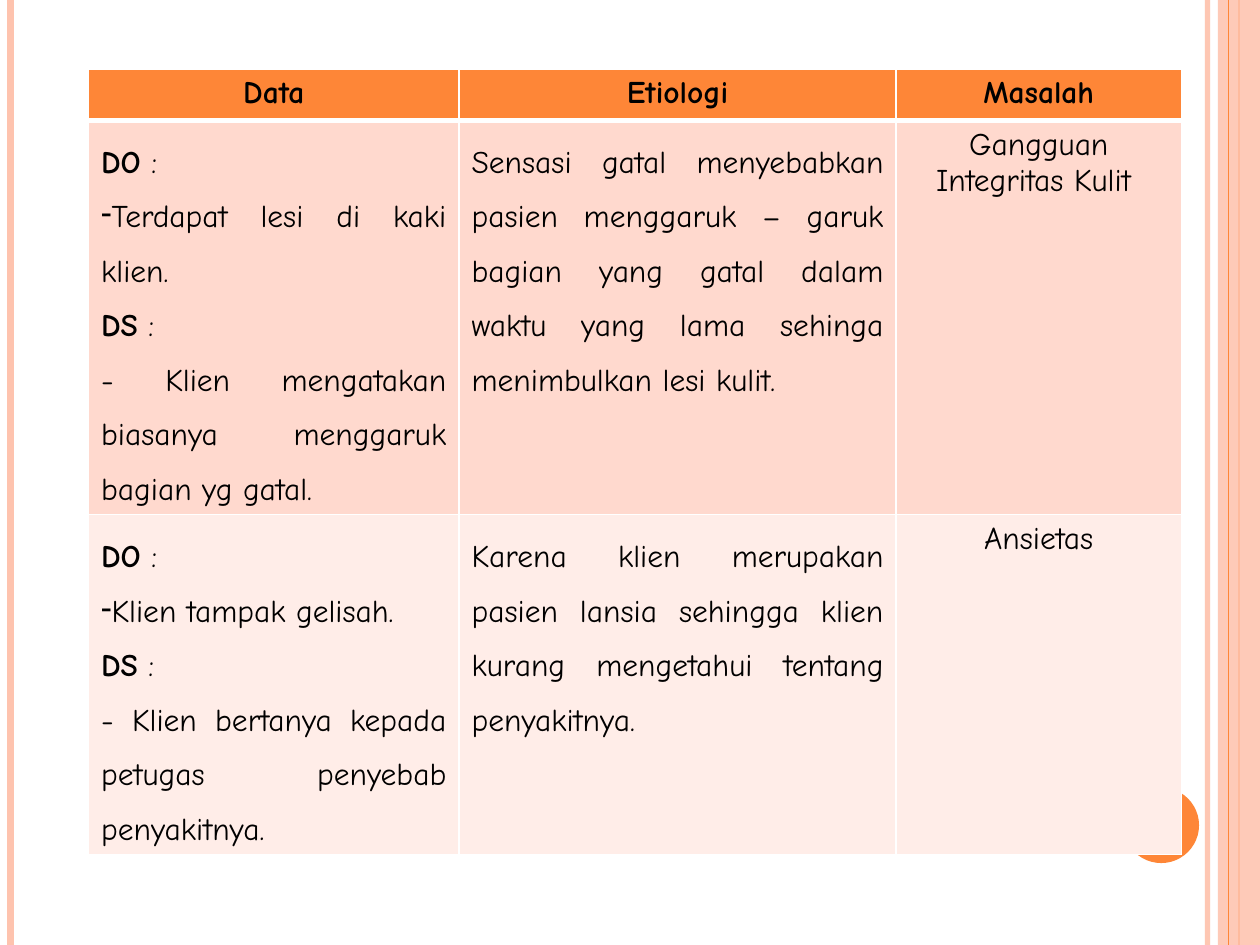
from dataclasses import dataclass

from lxml.etree import SubElement
from pptx import Presentation
from pptx.dml.color import RGBColor
from pptx.enum.shapes import MSO_CONNECTOR, MSO_SHAPE
from pptx.enum.text import PP_ALIGN
from pptx.oxml import parse_xml
from pptx.oxml.ns import nsdecls, qn
from pptx.util import Pt


@dataclass(frozen=True)
class Theme:
    """Colours, font and sizes of the slide."""
    orange: str = "FE8637"
    peach: str = "FEC3AE"
    white: str = "FFFFFF"
    text: str = "000000"
    bands: tuple = ("FFD9CE", "FFEDE8")
    font: str = "Comic Neue"
    size: float = 18
    border: float = 1
    header_border: float = 3


THEME = Theme()
HEADINGS = ("Data", "Etiologi", "Masalah")
FINDINGS = (
    (
        ("Terdapat lesi di kaki klien.",
         "- Klien mengatakan biasanya menggaruk bagian yg gatal."),
        "Sensasi gatal menyebabkan pasien menggaruk – garuk bagian yang gatal "
        "dalam waktu yang lama sehinga menimbulkan lesi kulit.",
        "Gangguan Integritas Kulit ",
    ),
    (
        ("Klien tampak gelisah.",
         "- Klien bertanya kepada petugas penyebab penyakitnya."),
        "Karena klien merupakan pasien lansia sehingga klien kurang mengetahui "
        "tentang penyakitnya. ",
        "Ansietas",
    ),
)


def apply_format(target, values):
    """Set every attribute in values on the target."""
    for name, value in values.items():
        setattr(target, name, value)


def set_alpha(fill, percent):
    """Make a solid fill partly transparent."""
    color = fill._xPr.find(qn("a:solidFill"))[0]
    SubElement(color, qn("a:alpha"), val=str(percent * 1000))


def add_stripe(slide, x, top, height, width, color, opacity=100):
    """Draw a vertical line."""
    line = slide.shapes.add_connector(
        MSO_CONNECTOR.STRAIGHT, Pt(x), Pt(top), Pt(x), Pt(top + height))
    line.line.width = Pt(width)
    line.line.color.rgb = RGBColor.from_string(color)
    if opacity < 100:
        set_alpha(line.line.fill, opacity)
    SubElement(line._element.spPr, qn("a:effectLst"))


def add_plain_shape(slide, kind, box, color, opacity=100):
    """Draw a filled shape without outline or shadow."""
    shape = slide.shapes.add_shape(kind, *map(Pt, box))
    shape.shadow.inherit = False
    shape.fill.solid()
    shape.fill.fore_color.rgb = RGBColor.from_string(color)
    shape.line.fill.background()
    if opacity < 100:
        set_alpha(shape.fill, opacity)


def add_frame(slide, box):
    """Draw the stripes at both edges and the disc."""
    left, top, width, height = box
    right = left + width
    add_stripe(slide, right - 30, top, height, 3, THEME.peach, 93)
    add_stripe(slide, left + 6, top, height, 4.5, THEME.peach)
    add_stripe(slide, right - 12, top, height, 1.5, THEME.orange)
    add_plain_shape(slide, MSO_SHAPE.RECTANGLE,
                    (right - 24, top, 24, height), THEME.peach, 87)
    add_stripe(slide, right - 18, top, height, 0.75, THEME.orange)
    add_plain_shape(slide, MSO_SHAPE.OVAL,
                    (right - 78, top + height - 90, 43.2, 43.2), THEME.orange)


def style_cell(cell, color, top, bottom):
    """Fill a cell and give it white borders."""
    cell.fill.solid()
    cell.fill.fore_color.rgb = RGBColor.from_string(color)
    properties = cell._tc.get_or_add_tcPr()
    widths = {"lnL": THEME.border, "lnR": THEME.border, "lnT": top, "lnB": bottom}
    for position, (side, width) in enumerate(widths.items()):
        properties.insert(position, parse_xml(
            f'<a:{side} {nsdecls("a")} w="{int(Pt(width))}"><a:solidFill>'
            f'<a:srgbClr val="{THEME.white}"/></a:solidFill></a:{side}>'))


def write_paragraph(paragraph, runs, alignment, spacing=None, bullet=None):
    """Write (text, bold) runs into a paragraph."""
    apply_format(paragraph, {"alignment": alignment, "line_spacing": spacing})
    if bullet:
        properties = paragraph._p.get_or_add_pPr()
        apply_format_xml = {"marL": "0", "indent": "0"}
        properties.attrib.update(apply_format_xml)
        SubElement(properties, qn("a:buChar"), char=bullet)
    for text, bold in runs:
        run = paragraph.add_run()
        run.text = text
        apply_format(run.font, {"name": THEME.font, "size": Pt(THEME.size), "bold": bold})
        run.font.color.rgb = RGBColor.from_string(THEME.text)


def write_data(text_frame, objective, subjective):
    """Write the objective and subjective data of one finding."""
    lines = (
        ((("DO", True), (" :", False)), None),
        (((objective, False),), "-"),
        ((("DS", True), (" :", False)), None),
        (((subjective, False),), None),
    )
    for index, (runs, bullet) in enumerate(lines):
        paragraph = text_frame.add_paragraph() if index else text_frame.paragraphs[0]
        write_paragraph(paragraph, runs, PP_ALIGN.JUSTIFY, 1.5, bullet)


def add_findings_table(slide, box):
    """Add the table of data, etiology and problem."""
    left, top, width, height = box
    frame = slide.shapes.add_table(
        len(FINDINGS) + 1, len(HEADINGS), *map(Pt, box))
    table = frame.table
    apply_format(table, {"first_row": False, "horz_banding": False})
    for column, share in zip(table.columns, (0.339, 0.4, 0.261)):
        column.width = Pt(round(width * share, 1))
    for row in table.rows:
        row.height = Pt(29.2)
    frame.height = Pt(height)

    for column, heading in enumerate(HEADINGS):
        cell = table.cell(0, column)
        style_cell(cell, THEME.orange, THEME.border, THEME.header_border)
        write_paragraph(cell.text_frame.paragraphs[0], ((heading, True),), PP_ALIGN.CENTER)

    for row, (finding, color) in enumerate(zip(FINDINGS, THEME.bands), start=1):
        cells = [table.cell(row, column) for column in range(len(HEADINGS))]
        for cell in cells:
            style_cell(cell, color, THEME.header_border if row == 1 else THEME.border,
                       THEME.border)
        data, etiology, problem = finding
        write_data(cells[0].text_frame, *data)
        write_paragraph(cells[1].text_frame.paragraphs[0], ((etiology, False),),
                        PP_ALIGN.JUSTIFY, 1.5)
        write_paragraph(cells[2].text_frame.paragraphs[0], ((problem, False),),
                        PP_ALIGN.CENTER)


def main():
    """Build and save the slide."""
    presentation = Presentation()
    apply_format(presentation, {"slide_width": Pt(720), "slide_height": Pt(540)})
    slide = presentation.slides.add_slide(presentation.slide_layouts[6])
    add_frame(slide, (0, 0, 720, 540))
    add_findings_table(slide, (50.6, 39.6, 624.4, 465))
    presentation.save("out.pptx")


if __name__ == "__main__":
    main()
